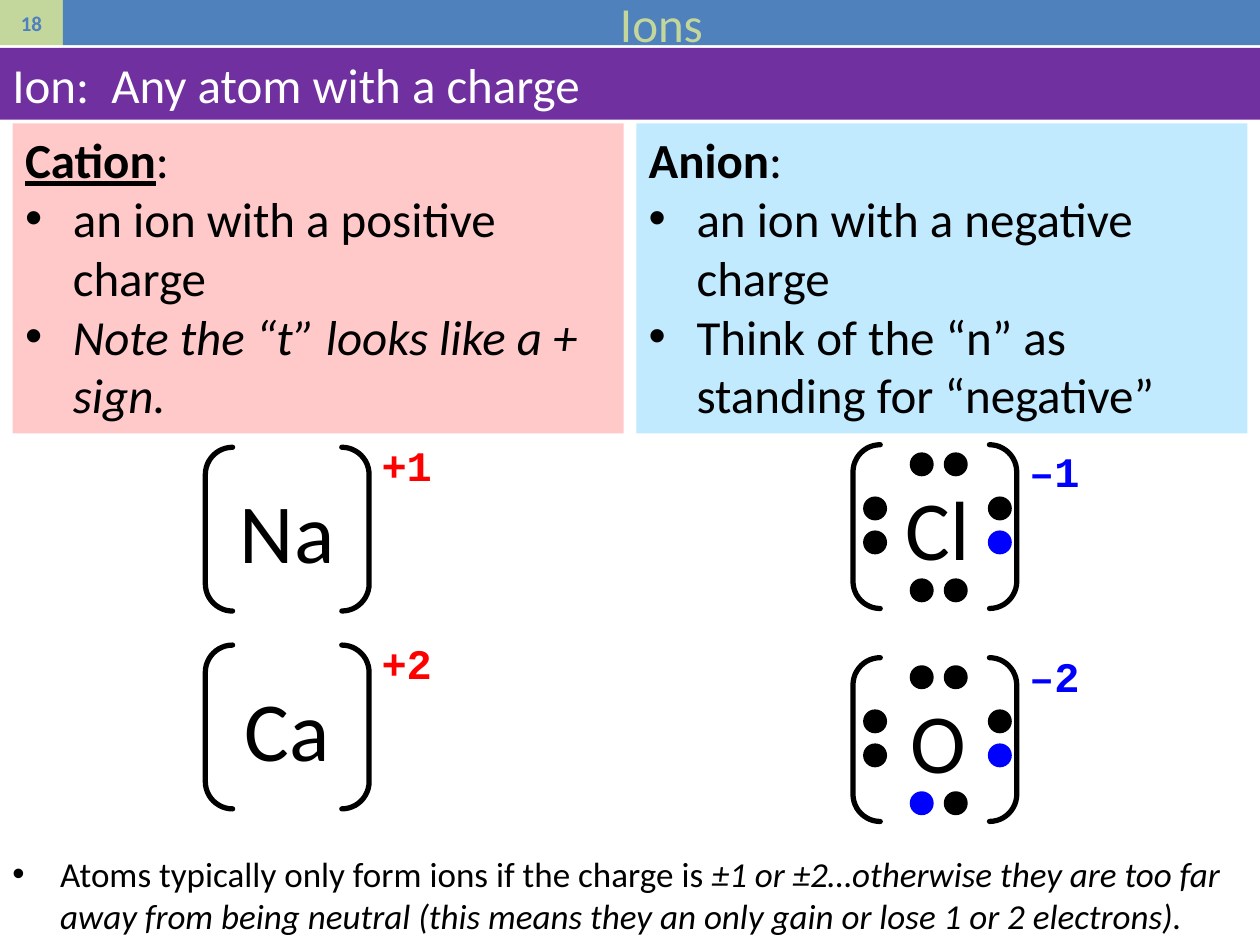
from dataclasses import dataclass
from typing import NamedTuple

from lxml.etree import SubElement
from pptx import Presentation
from pptx.dml.color import RGBColor
from pptx.enum.shapes import MSO_SHAPE as Shape
from pptx.enum.text import MSO_ANCHOR as Anchor, PP_ALIGN as Align
from pptx.oxml.ns import qn
from pptx.util import Emu, Pt

PX = 9144


class Box(NamedTuple):
    left: int
    top: int
    width: int
    height: int

    def inner(self, left, top, width, height):
        return Box(self.left + left, self.top + top, width, height)

    def emu(self):
        return [Emu(length * PX) for length in self]


@dataclass(frozen=True)
class Theme:
    body: str = "Calibri"
    mono: str = "Courier New"
    black: str = "000000"
    white: str = "FFFFFF"
    blue: str = "4F81BD"
    green: str = "C3D69B"
    purple: str = "7030A0"
    pink: str = "FFC9C9"
    sky: str = "C1EAFF"
    positive: str = "FF0000"
    negative: str = "0000FF"
    number_size: int = 12
    note_size: int = 20
    charge_size: int = 24
    text_size: int = 28
    symbol_size: int = 48
    bracket_width: int = 3
    indent: int = 38


THEME = Theme()


def add_shape(shapes, kind, box, fill=None, outline=None):
    shape = shapes.add_shape(kind, *box.emu())
    shape.shadow.inherit = False
    if fill:
        shape.fill.solid()
        shape.fill.fore_color.rgb = RGBColor.from_string(fill)
    else:
        shape.fill.background()
    if outline:
        shape.line.color.rgb = RGBColor.from_string(outline)
        shape.line.width = Pt(THEME.bracket_width)
        shape.line._get_or_add_ln().set("cap", "rnd")
    else:
        shape.line.fill.background()
    return shape


def prepare_frame(shape, anchor=Anchor.TOP, wrap=True):
    frame = shape.text_frame
    frame.word_wrap = wrap
    frame.vertical_anchor = anchor
    return frame


def add_span(para, text, size, color=THEME.black, font=THEME.body,
             bold=False, italic=False, underline=False):
    span = para.add_run()
    span.text = text
    span.font.name = font
    span.font.size = Pt(size)
    span.font.color.rgb = RGBColor.from_string(color)
    span.font.bold = bold
    span.font.italic = italic
    span.font.underline = underline


def add_bullet(para):
    para.alignment = Align.LEFT
    props = para._p.get_or_add_pPr()
    props.set("marL", str(THEME.indent * PX))
    props.set("indent", str(-THEME.indent * PX))
    SubElement(props, qn("a:buFont"), typeface="Arial")
    SubElement(props, qn("a:buChar"), char="•")


def add_banner(page, box, text, fill, color, size=THEME.text_size,
               align=Align.CENTER, anchor=Anchor.MIDDLE, bold=False):
    banner = add_shape(page.shapes, Shape.RECTANGLE, box, fill)
    para = prepare_frame(banner, anchor).paragraphs[0]
    para.alignment = align
    add_span(para, text, size, color, bold=bold)


def add_definition(page, box, fill, term, underline, points):
    card = add_shape(page.shapes, Shape.RECTANGLE, box, fill)
    frame = prepare_frame(card)
    heading = frame.paragraphs[0]
    heading.alignment = Align.LEFT
    add_span(heading, term, THEME.text_size, bold=True, underline=underline)
    add_span(heading, ":", THEME.text_size)
    for text, italic in points:
        para = frame.add_paragraph()
        add_bullet(para)
        add_span(para, text, THEME.text_size, italic=italic)


def add_symbol(shapes, box, text, width, center):
    place = box.inner(center - width // 2, 20, width, 91)
    symbol = shapes.add_textbox(*place.emu())
    para = prepare_frame(symbol, Anchor.MIDDLE, wrap=False).paragraphs[0]
    para.alignment = Align.CENTER
    add_span(para, text, THEME.symbol_size)


def add_bracket_charge(page, box, charge, color, rise):
    add_shape(page.shapes, Shape.DOUBLE_BRACKET, box, outline=THEME.black)
    label = page.shapes.add_textbox(*box.inner(box.width, -rise, 70, 50).emu())
    para = prepare_frame(label).paragraphs[0]
    add_span(para, charge, THEME.charge_size, color, THEME.mono, bold=True)


def add_cation(page, box, text, width, charge):
    add_symbol(page.shapes, box, text, width, 65)
    add_bracket_charge(page, box, charge, THEME.positive, 11)


def add_anion(page, box, text, width, charge, rise, gained):
    dots = [(left, top) for top in (6, 106) for left in (45, 72)]
    dots += [(left, top) for left in (107, 8) for top in (41, 68)]
    atom = page.shapes.add_group_shape()
    add_symbol(atom.shapes, box, text, width, 67)
    for index, (left, top) in enumerate(dots):
        color = THEME.negative if index in gained else THEME.black
        add_shape(atom.shapes, Shape.OVAL, box.inner(left, top, 19, 19), color)
    add_bracket_charge(page, box, charge, THEME.negative, rise)


def add_note(page, box):
    note = page.shapes.add_textbox(*box.emu())
    para = prepare_frame(note).paragraphs[0]
    add_bullet(para)
    add_span(para, "Atoms typically only form ions if the charge is ", THEME.note_size)
    add_span(para, "±1 or ±2…otherwise they are too far away from being neutral "
             "(this means they an only gain or lose 1 or 2 electrons).",
             THEME.note_size, italic=True)


def build_ions(page):
    add_banner(page, Box(0, 0, 50, 36), "18", THEME.green, THEME.blue,
               THEME.number_size, bold=True)
    add_banner(page, Box(50, 0, 950, 36), "Ions", THEME.blue, THEME.green)
    add_banner(page, Box(0, 38, 1000, 57), "Ion:  Any atom with a charge",
               THEME.purple, THEME.white, align=Align.LEFT, anchor=Anchor.TOP)
    add_definition(page, Box(10, 98, 485, 246), THEME.pink, "Cation", True, [
        ("an ion with a positive charge", False),
        ("Note the “t” looks like a + sign.", True),
    ])
    add_definition(page, Box(505, 98, 485, 246), THEME.sky, "Anion", False, [
        ("an ion with a negative charge", False),
        ("Think of the “n” as standing for “negative”", False),
    ])
    add_cation(page, Box(163, 355, 130, 130), "Na", 96, "+1")
    add_cation(page, Box(163, 512, 130, 130), "Ca", 88, "+2")
    add_anion(page, Box(677, 353, 130, 130), "Cl", 72, "–1", 4, {5})
    add_anion(page, Box(677, 522, 130, 130), "O", 65, "–2", 11, {2, 5})
    add_note(page, Box(0, 672, 1000, 77))


def main():
    deck = Presentation()
    deck.slide_width = Emu(1000 * PX)
    deck.slide_height = Emu(750 * PX)
    build_ions(deck.slides.add_slide(deck.slide_layouts[6]))
    deck.save("out.pptx")


if __name__ == "__main__":
    main()
